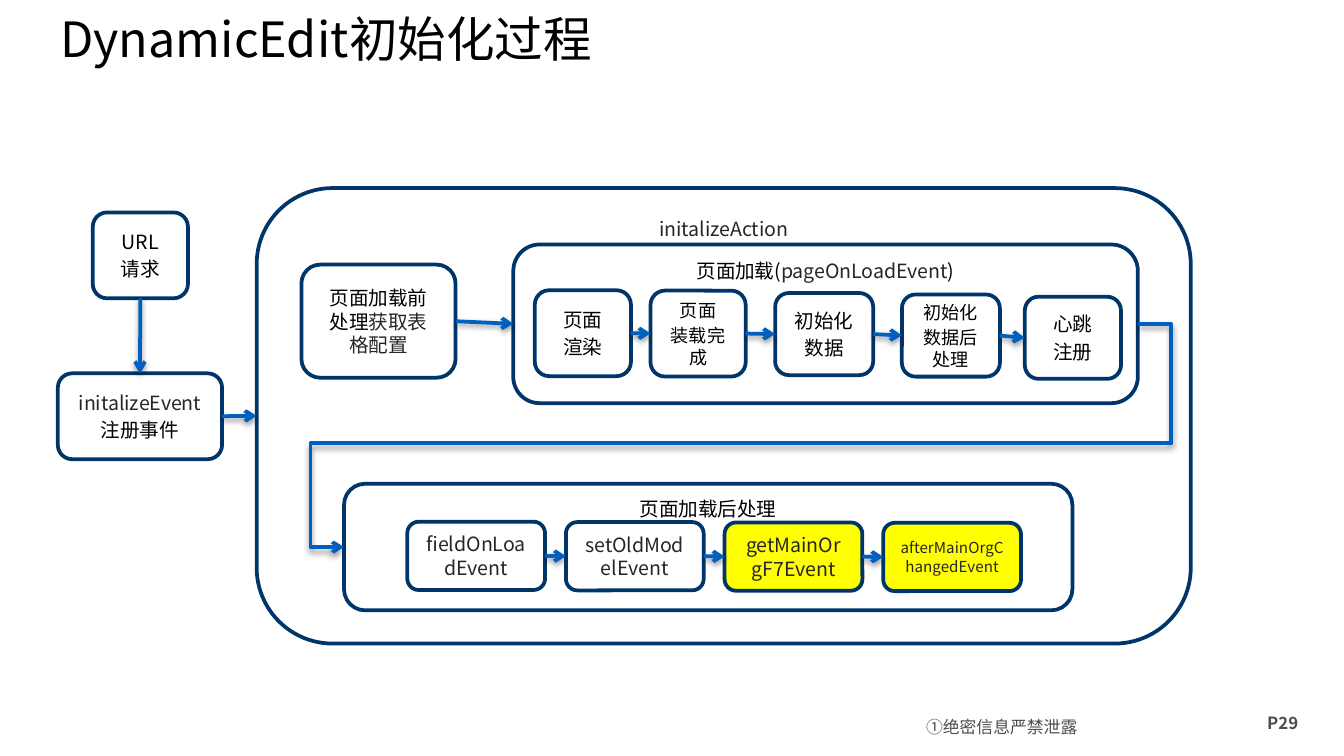
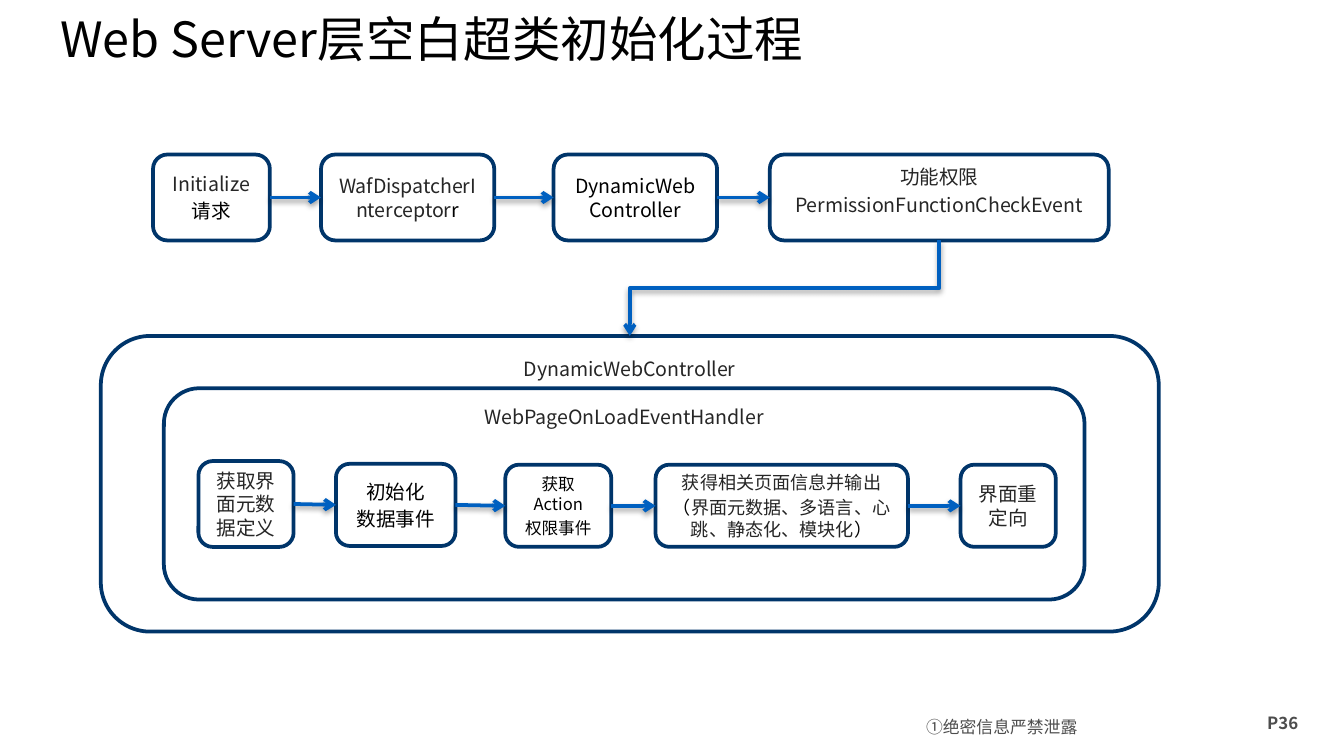
from dataclasses import dataclass

import lxml.etree
import pptx
import pptx.dml.color
import pptx.enum.dml
import pptx.enum.shapes
import pptx.enum.text
import pptx.oxml.ns
import pptx.util

Pt = pptx.util.Pt
qn = pptx.oxml.ns.qn
ALIGN = pptx.enum.text.PP_ALIGN
ANCHOR = pptx.enum.text.MSO_ANCHOR
CONNECTOR = pptx.enum.shapes.MSO_CONNECTOR

FONT = "Noto Sans CJK SC"
BLACK, DARK, GREY = "000000", "262626", "4D4D4D"
WHITE, YELLOW, NAVY, BLUE = "FFFFFF", "FFFF00", "00356A", "0060C0"
TOP, LEFT, BOTTOM, RIGHT = range(4)  # connection sites of a rounded box


@dataclass(frozen=True)
class Run:
    text: str
    color: str = BLACK


@dataclass(frozen=True)
class Step:
    """A rounded box; each line is one paragraph made of runs."""
    key: str
    x: float
    y: float
    width: float
    height: float
    lines: tuple[tuple[Run, ...], ...]
    size: float = 10.5
    fill: str = WHITE
    anchor: ANCHOR = ANCHOR.MIDDLE


@dataclass(frozen=True)
class Arrow:
    start: str
    end: str
    leave: int = RIGHT
    enter: int = LEFT
    preset: str = "line"
    bends: tuple[int, ...] = ()
    turned: bool = False


def lines(*texts: str, color: str = BLACK) -> tuple[tuple[Run, ...], ...]:
    return tuple((Run(text, color),) for text in texts)


def chain(*keys: str) -> list[Arrow]:
    return [Arrow(start, end) for start, end in zip(keys, keys[1:])]


def rgb(color: str) -> pptx.dml.color.RGBColor:
    return pptx.dml.color.RGBColor.from_string(color)


def add_run(paragraph, run: Run, size: float, bold: bool = False) -> None:
    piece = paragraph.add_run()
    piece.text = run.text
    piece.font.size = Pt(size)
    piece.font.bold = bold
    piece.font.color.rgb = rgb(run.color)
    piece.font.name = FONT
    east_asian = lxml.etree.SubElement(piece.font._element, qn("a:ea"))
    east_asian.set("typeface", FONT)


def add_label(slide, x: float, y: float, width: float, height: float, run: Run,
              size: float, inset: tuple[float, float] = (7.2, 3.6), bold: bool = False):
    frame = slide.shapes.add_textbox(Pt(x), Pt(y), Pt(width), Pt(height)).text_frame
    frame.word_wrap = True
    frame.margin_left = frame.margin_right = Pt(inset[0])
    frame.margin_top = frame.margin_bottom = Pt(inset[1])
    add_run(frame.paragraphs[0], run, size, bold)
    return frame


def add_step(slide, step: Step):
    box = slide.shapes.add_shape(pptx.enum.shapes.MSO_SHAPE.ROUNDED_RECTANGLE,
                                 Pt(step.x), Pt(step.y), Pt(step.width), Pt(step.height))
    box.shadow.inherit = False
    box.fill.solid()
    box.fill.fore_color.rgb = rgb(step.fill)
    box.line.color.rgb = rgb(NAVY)
    box.line.width = Pt(2)
    frame = box.text_frame
    frame.word_wrap = True
    frame.vertical_anchor = step.anchor
    for index, runs in enumerate(step.lines):
        paragraph = frame.add_paragraph() if index else frame.paragraphs[0]
        paragraph.alignment = ALIGN.CENTER
        if index:
            paragraph.space_before = Pt(2)
        for run in runs:
            add_run(paragraph, run, step.size)
    return box


def turn_quarter(connector) -> None:
    """Rotate an elbow so that it leaves its first box vertically."""
    across, down = connector.width, connector.height
    center_x, center_y = connector.left + across // 2, connector.top + down // 2
    connector.left, connector.top = center_x - down // 2, center_y - across // 2
    connector.width, connector.height = down, across
    xfrm = connector.element.spPr.find(qn("a:xfrm"))
    xfrm.attrib.pop("flipH", None)
    xfrm.set("rot", "5400000")


def add_arrow(slide, arrow: Arrow, boxes: dict) -> None:
    straight = arrow.preset == "line"
    kind = CONNECTOR.STRAIGHT if straight else CONNECTOR.ELBOW
    connector = slide.shapes.add_connector(kind, 0, 0, 0, 0)
    connector.begin_connect(boxes[arrow.start], arrow.leave)
    connector.end_connect(boxes[arrow.end], arrow.enter)
    connector.line.color.rgb = rgb(BLUE)
    connector.line.width = Pt(2)
    properties = connector.element.spPr

    # Route
    geometry = properties.find(qn("a:prstGeom"))
    geometry.set("prst", arrow.preset)
    for number, bend in enumerate(arrow.bends, 1):
        guide = lxml.etree.SubElement(geometry.find(qn("a:avLst")), qn("a:gd"))
        guide.set("name", f"adj{number}")
        guide.set("fmla", f"val {bend}")
    if arrow.turned:
        turn_quarter(connector)

    # Arrowhead and soft shadow
    lxml.etree.SubElement(properties.find(qn("a:ln")), qn("a:tailEnd")).set("type", "arrow")
    effects = lxml.etree.SubElement(properties, qn("a:effectLst"))
    shadow = lxml.etree.SubElement(effects, qn("a:outerShdw"), blurRad=str(Pt(3.1)),
                                   dist=str(Pt(1.6)), dir="5400000", rotWithShape="0")
    tint = lxml.etree.SubElement(shadow, qn("a:srgbClr"), val=BLACK)
    lxml.etree.SubElement(tint, qn("a:alpha"), val="38000")


def add_flow(deck, title: str, page: str, steps: list[Step], arrows: list[Arrow]) -> None:
    slide = deck.slides.add_slide(deck.slide_layouts[6])
    # Footer
    notice = add_label(slide, 490.3, 380.2, 127.4, 19.4, Run("①绝密信息严禁泄露", GREY), 9, (5.8, 0.7))
    notice.paragraphs[0].alignment = ALIGN.JUSTIFY
    notice.paragraphs[0].line_spacing = Pt(14)
    add_label(slide, 671.8, 378, 40.3, 18, Run(page, GREY), 9, bold=True)
    # Title
    heading = add_label(slide, 25.2, 0, 561.6, 41, Run(title), 26)
    heading.vertical_anchor = ANCHOR.MIDDLE
    # Flow
    boxes = {step.key: add_step(slide, step) for step in steps}
    for arrow in arrows:
        add_arrow(slide, arrow, boxes)


def edit_steps() -> list[Step]:
    load_title = (Run("页面加载("), Run("pageOnLoadEvent", DARK), Run(")"))
    steps = [
        Step("action", 137.5, 100.8, 500.4, 244, lines("initalizeAction", color=DARK), anchor=ANCHOR.TOP),
        Step("load", 275, 131, 334.6, 85, (load_title,), anchor=ANCHOR.TOP),
        Step("render", 286.5, 155.5, 51.5, 46, lines("页面", "渲染")),
        Step("url", 49.7, 113.8, 51, 46, lines("URL", "请求")),
        Step("event", 31, 200, 88, 46, ((Run("initalizeEvent", DARK),), (Run("注册事件"),))),
        Step("loaded", 348.5, 155.7, 51, 46, lines("页面", "装载完成"), 9.7),
        Step("heartbeat", 549, 159, 51.5, 44, lines("心跳", "注册")),
        Step("data", 415.3, 157, 52.5, 44, lines("初始化", "数据")),
        Step("after_data", 483.2, 157.8, 52.5, 44, lines("初始化", "数据后处理"), 9.7),
        Step("before_load", 161.5, 141.8, 82.6, 60.6,
             ((Run("页面加载前处理"), Run("获取表格配置", DARK)),)),
        Step("after_load", 184.3, 259.2, 390.2, 67.8, lines("页面加载后处理"), anchor=ANCHOR.TOP),
    ]
    # Events after loading, at an equal pitch
    events = [("fieldOnLoadEvent", 10.5, WHITE), ("setOldModelEvent", 10.5, WHITE),
              ("getMainOrgF7Event", 10.5, YELLOW), ("afterMainOrgChangedEvent", 8.1, YELLOW)]
    for index, (name, size, fill) in enumerate(events):
        steps.append(Step(name, 218.2 + 85 * index, 279.5 + 0.2 * index, 73.8, 36.6,
                          lines(name, color=DARK), size, fill))
    return steps


def edit_arrows() -> list[Arrow]:
    return [
        *chain("render", "loaded", "data", "after_data", "heartbeat"),
        *chain("before_load", "load"),
        *chain("event", "action"),
        *chain("fieldOnLoadEvent", "setOldModelEvent", "getMainOrgF7Event", "afterMainOrgChangedEvent"),
        Arrow("url", "event", BOTTOM, TOP),
        Arrow("load", "after_load", preset="bentConnector5", bends=(-4200, 53500, 104200)),
    ]


def web_steps() -> list[Step]:
    row = 82.8
    details = (Run("（"), Run("界面元数据、多语言、心跳、静态化、模块化", DARK), Run("）"))
    return [
        Step("controller", 54, 180, 566.8, 158.4, lines("DynamicWebController", color=DARK), anchor=ANCHOR.TOP),
        Step("handler", 87.8, 208, 493.2, 113.2, lines("WebPageOnLoadEventHandler", color=DARK),
             anchor=ANCHOR.TOP),
        Step("permission", 412.4, row, 181.5, 46,
             lines("功能权限", "PermissionFunctionCheckEvent", color=DARK), anchor=ANCHOR.TOP),
        Step("metadata", 106.3, 247, 51, 46, lines("获取界面元数据定义", color=DARK)),
        Step("initialize", 82, row, 62.6, 46, ((Run("Initialize", DARK),), (Run("请求"),))),
        Step("dispatch", 296.6, row, 87.6, 46, lines("DynamicWebController")),
        Step("output", 351.2, 249, 135.2, 44,
             (*lines("获得相关页面信息并输出", color=DARK), details), 9.7),
        Step("data_event", 180, 248.5, 64, 44, lines("初始化", "数据事件")),
        Step("interceptor", 172, row, 92.8, 46, ((Run("WafDispatcherInterceptor", DARK), Run("r")),)),
        Step("redirect", 514.6, 249, 51, 44, lines("界面重定向", color=DARK)),
        Step("action_right", 270.7, 249, 56.8, 44, lines("获取Action", "权限事件"), 8.9),
    ]


def web_arrows() -> list[Arrow]:
    return [
        *chain("initialize", "interceptor", "dispatch", "permission"),
        *chain("metadata", "data_event", "action_right", "output", "redirect"),
        Arrow("permission", "controller", BOTTOM, TOP, "bentConnector3", (50000,), True),
    ]


def main() -> None:
    deck = pptx.Presentation()
    deck.slide_width, deck.slide_height = Pt(720), Pt(405)
    add_flow(deck, "DynamicEdit初始化过程", "P29", edit_steps(), edit_arrows())
    add_flow(deck, "Web Server层空白超类初始化过程", "P36", web_steps(), web_arrows())
    deck.save("out.pptx")


if __name__ == "__main__":
    main()
